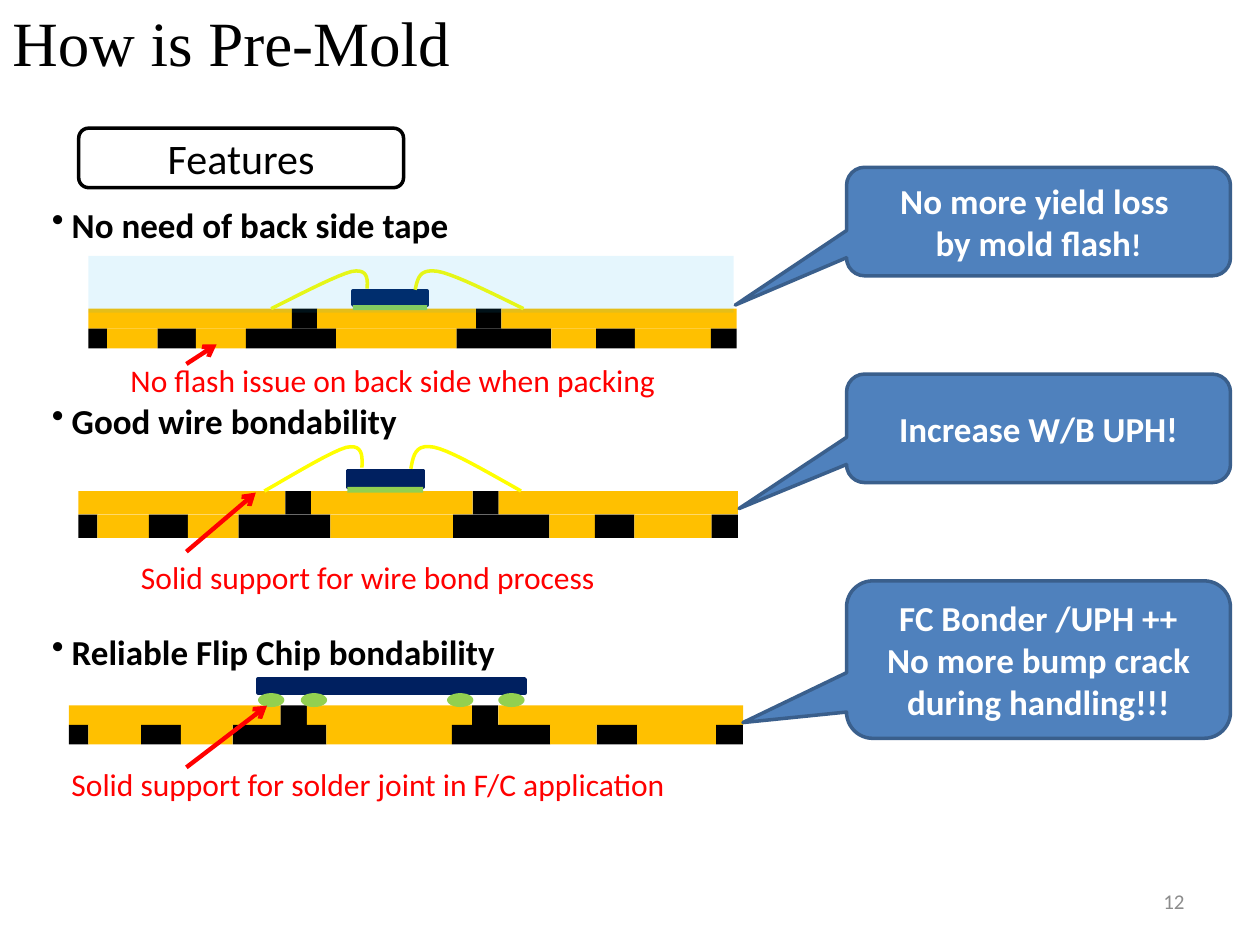
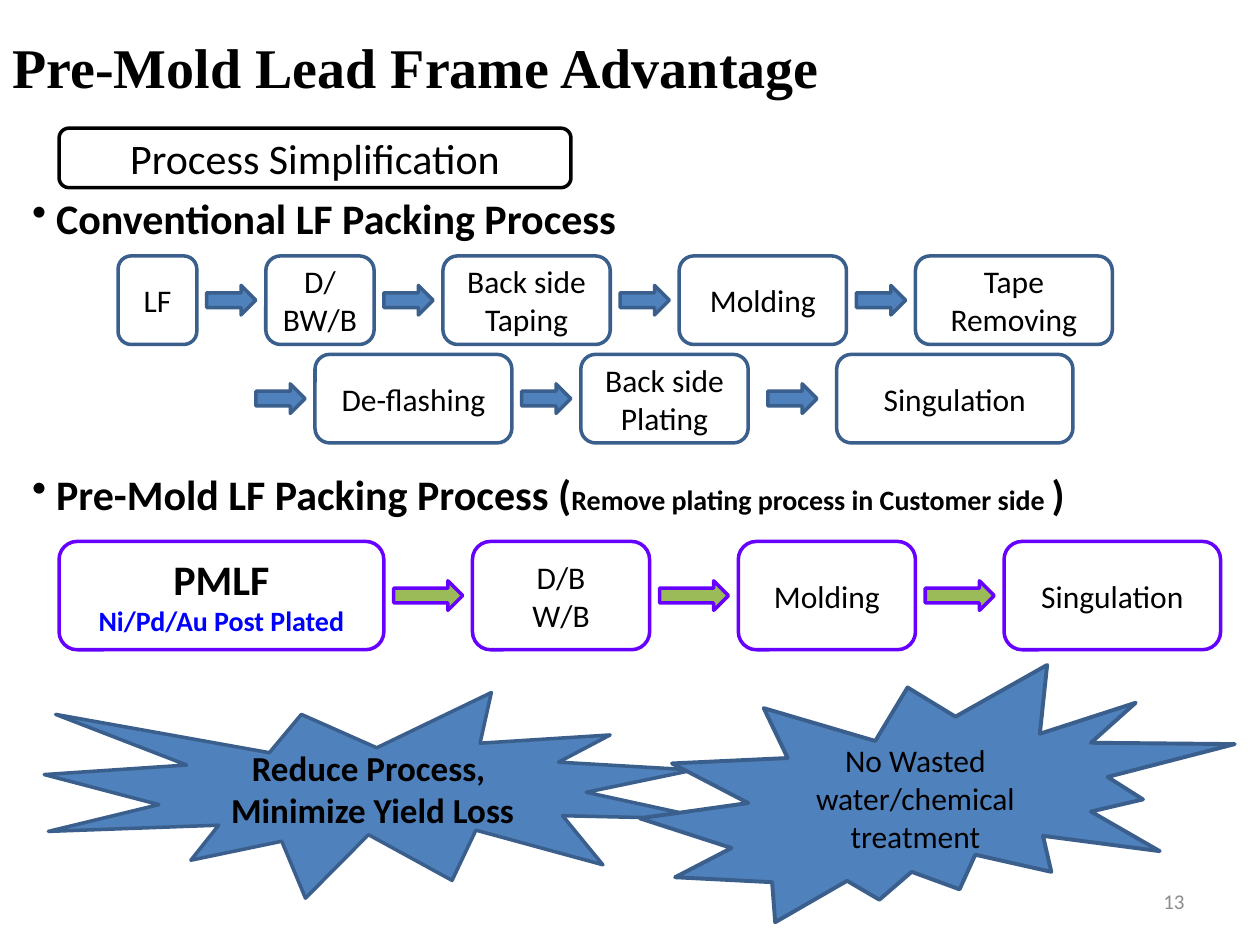
from pptx import Presentation
from pptx.dml.color import RGBColor
from pptx.enum.shapes import MSO_CONNECTOR, MSO_SHAPE
from pptx.enum.text import MSO_ANCHOR, PP_ALIGN
from pptx.oxml.ns import qn
from pptx.util import Pt
from lxml import etree

BLACK = RGBColor(0x00, 0x00, 0x00)
WHITE = RGBColor(0xFF, 0xFF, 0xFF)
GREY = RGBColor(0x8C, 0x8C, 0x8C)
RED = RGBColor(0xFF, 0x00, 0x00)
BLUE = RGBColor(0x4F, 0x81, 0xBD)
BLUE_LINE = RGBColor(0x3A, 0x5F, 0x8C)
PURE_BLUE = RGBColor(0x00, 0x00, 0xFF)
SKY = RGBColor(0x00, 0xB0, 0xF0)
NAVY = RGBColor(0x00, 0x20, 0x60)
COPPER = RGBColor(0xFF, 0xC0, 0x00)
YELLOW = RGBColor(0xFF, 0xFF, 0x00)
SOLDER = RGBColor(0x92, 0xD0, 0x50)
GREEN = RGBColor(0x9B, 0xBB, 0x59)
VIOLET = RGBColor(0x66, 0x00, 0xFF)

RECT = MSO_SHAPE.RECTANGLE
ROUNDED = MSO_SHAPE.ROUNDED_RECTANGLE
CALLOUT = MSO_SHAPE.ROUNDED_RECTANGULAR_CALLOUT
BUMP = MSO_SHAPE.FLOWCHART_CONNECTOR
ARROW = MSO_SHAPE.RIGHT_ARROW
SEAL_1 = MSO_SHAPE.EXPLOSION1
SEAL_2 = MSO_SHAPE.EXPLOSION2
STRAIGHT = MSO_CONNECTOR.STRAIGHT
LEFT, CENTER, RIGHT = PP_ALIGN.LEFT, PP_ALIGN.CENTER, PP_ALIGN.RIGHT
TOP, MIDDLE, BOTTOM = MSO_ANCHOR.TOP, MSO_ANCHOR.MIDDLE, MSO_ANCHOR.BOTTOM


def draw(shapes, preset, place, fill=None, line=None, weight=2):
    """Add a preset shape, or a text box when preset is None; place is in points."""
    place = [Pt(length) for length in place]
    if preset is None:
        return shapes.add_textbox(*place)
    shape = shapes.add_shape(preset, *place)
    shape.shadow.inherit = False
    if fill is None:
        shape.fill.background()
    else:
        shape.fill.solid()
        shape.fill.fore_color.rgb = fill
    if line is None:
        shape.line.fill.background()
    else:
        shape.line.color.rgb = line
        shape.line.width = Pt(weight)
    return shape


def write(box, paras, size, color=BLACK, align=CENTER, anchor=MIDDLE,
          bold=False, face="Calibri", bullet=False):
    """Fill a box; each paragraph is a list of (text, changed format values)."""
    frame = box.text_frame
    frame.word_wrap = True
    frame.vertical_anchor = anchor
    for index, spans in enumerate(paras):
        para = frame.paragraphs[0] if index == 0 else frame.add_paragraph()
        para.alignment = align
        if bullet:
            properties = para._p.get_or_add_pPr()
            indent = Pt(0.57 * size)
            properties.set("marL", str(indent))
            properties.set("indent", str(-indent))
            etree.SubElement(properties, qn("a:buChar"), char="•")
        for text, changes in spans:
            span = para.add_run()
            span.text = text
            values = {"name": face, "size": Pt(size), "bold": bold} | changes
            span.font.color.rgb = values.pop("color", color)
            for name, value in values.items():
                setattr(span.font, name, value)


deck = Presentation()
deck.slide_width, deck.slide_height = Pt(720), Pt(540)
blank = deck.slide_layouts[6]

# Title, heading and page number of each slide
pages = []
for number, title, title_place, title_size, bold, heading, heading_left, heading_width in [
    ("12", "How is Pre-Mold", (0, 0, 558.75, 49), 36, False, "Features", 45, 185.6),
    ("13", "Pre-Mold Lead Frame Advantage", (0, 15, 558.75, 45.5), 32, True,
     "Process Simplification", 33.75, 292.5),
]:
    page = deck.slides.add_slide(blank)
    pages.append(page)
    write(draw(page.shapes, None, (516, 500.5, 168, 28.75)), [[(number, {})]], 12, GREY, RIGHT)
    write(draw(page.shapes, None, title_place), [[(title, {})]], title_size,
          align=LEFT, anchor=BOTTOM, bold=bold, face="Times New Roman")
    box = draw(page.shapes, ROUNDED, (heading_left, 73.25, heading_width, 34), WHITE, BLACK)
    write(box, [[(heading, {})]], 24)
features, process = pages

# Lead frame cross-sections: x in percent of the frame width, y in layer heights
TOP_BREAKS = [0, 31.4, 35.3, 59.8, 63.7, 100]
BOTTOM_BREAKS = [0, 2.9, 10.7, 16.6, 24.3, 38.2, 56.8, 71.4, 78.3, 84.3, 96, 100]
WIRES = [
    [(50.4, -0.95), (50.8, -1.51), (51, -2.02), (53.9, -1.87),
     (56.6, -1.7), (61.8, -0.84), (67.1, 0)],
    [(43, -1), (43.1, -1.51), (43.1, -2.02), (40.6, -1.86),
     (38.1, -1.67), (30, -0.27), (28.2, 0)],
]
BUMPS = [28.06, 34.4, 56.1, 63.7]
CURVE_STEPS = 10

for heading, heading_top, caption, caption_place, frame, arrow_ends, flip_chip, molded in [
    ("No need of back side tape", 112.5, "No flash issue on back side when packing",
     (67.5, 202.5, 348.5, 28.8), (50.5, 176.4, 370.5, 11.4), (106.5, 208, 123.8, 196.8),
     False, True),
    ("Good wire bondability", 224.5, "Solid support for wire bond process",
     (73.5, 315.25, 337.5, 28.8), (44.75, 280.6, 377, 13.4), (106.5, 315.25, 146.2, 281.5),
     False, False),
    ("Reliable Flip Chip bondability", 356.5, "Solid support for solder joint in F/C application",
     (33.75, 433.5, 433.5, 28.8), (39.4, 403, 385.2, 11.2), (106.5, 438.5, 152.6, 403.25),
     True, False),
]:
    box = draw(features.shapes, None, (22.5, heading_top, 650, 31.5))
    write(box, [[(heading, {})]], 20, align=LEFT, anchor=TOP, bold=True, bullet=True)

    parts = features.shapes.add_group_shape().shapes
    write(draw(parts, None, caption_place), [[(caption, {})]], 18, RED, LEFT, TOP)
    left, top, width, layer = frame
    percent = width / 100
    for row, (breaks, colors) in enumerate([(TOP_BREAKS, (COPPER, BLACK)),
                                            (BOTTOM_BREAKS, (BLACK, COPPER))]):
        for index, (start, end) in enumerate(zip(breaks, breaks[1:])):
            draw(parts, RECT, (left + start * percent, top + row * layer,
                               (end - start) * percent, layer), colors[index % 2])

    if flip_chip:
        draw(parts, RECT, (left + 28.06 * percent, top - 1.34 * layer,
                           39.6 * percent, 0.71 * layer), NAVY, NAVY)
        for bump in BUMPS:
            draw(parts, BUMP, (left + bump * percent, top - 0.62 * layer,
                               3.9 * percent, 0.71 * layer), SOLDER)
    else:
        chip_left, chip_width = left + 40.8 * percent, 11.47 * percent
        draw(parts, RECT, (chip_left, top - 0.88 * layer, chip_width, 0.7 * layer), NAVY, NAVY)
        draw(parts, RECT, (chip_left, top - 0.18 * layer, chip_width, 0.25 * layer), SOLDER)
        for wire in WIRES:
            points = [(Pt(left + x * percent), Pt(top + y * layer)) for x, y in wire]
            outline = []
            for first in (0, 3):
                for step in range(1, CURVE_STEPS + 1):
                    t = step / CURVE_STEPS
                    weights = ((1 - t) ** 3, 3 * t * (1 - t) ** 2, 3 * t * t * (1 - t), t ** 3)
                    outline.append([sum(w * point[axis] for w, point in
                                        zip(weights, points[first:first + 4]))
                                    for axis in (0, 1)])
            builder = parts.build_freeform(*points[0])
            builder.add_line_segments(outline, close=False)
            curve = builder.convert_to_shape()
            curve.shadow.inherit = False
            curve.fill.background()
            curve.line.color.rgb = YELLOW
            curve.line.width = Pt(2)

    pointer = parts.add_connector(STRAIGHT, *[Pt(length) for length in arrow_ends])
    pointer.line.color.rgb = RED
    pointer.line.width = Pt(2.5)
    properties = pointer._element.spPr
    etree.SubElement(properties.find(qn("a:ln")), qn("a:tailEnd"), type="arrow")
    etree.SubElement(properties, qn("a:effectLst"))

    if molded:
        mold = draw(parts, RECT, (50.5, 146.2, 368.75, 32.4), SKY)
        tint = mold._element.spPr.find(qn("a:solidFill"))[0]
        etree.SubElement(tint, qn("a:alpha"), val="10000")

for top, height, tip, paras in [
    (95.6, 62, (-0.79, 0.77),
     [[("No more yield loss ", {})], [("by mold flash", {}), ("!", {"size": Pt(18)})]]),
    (213.75, 62, (-0.78, 0.74), [[("Increase W/B UPH!", {})]]),
    (331.9, 90, (-0.77, 0.4),
     [[("FC Bonder /UPH ++", {})], [("No more bump crack during handling!!!", {})]]),
]:
    callout = draw(features.shapes, CALLOUT, (483.75, top, 219.4, height), BLUE, BLUE_LINE)
    callout.adjustments[0], callout.adjustments[1] = tip
    write(callout, paras, 20, WHITE, bold=True)

# Process headings
for top, spans in [
    (106.5, [("Conventional LF Packing Process", {})]),
    (264, [("Pre-Mold LF Packing Process (", {}),
           ("Remove plating process in Customer side ", {"size": Pt(16)}), (")", {})]),
]:
    box = draw(process.shapes, None, (11.25, top, 708.75, 36.25))
    write(box, [spans], 24, align=LEFT, anchor=TOP, bold=True, bullet=True)

# Process rows: each step is the left of its arrow, left and width of its box, and its text
PLATED = {"size": Pt(16), "bold": True, "color": PURE_BLUE}
for top, height, line, arrow_fill, arrow_width, steps in [
    (146.25, 50.6, BLUE_LINE, BLUE, 28.1, [
        (None, 67.5, 45, [[("LF", {})]]),
        (118.1, 151.9, 61.9, [[("D/BW/B", {})]]),
        (219.4, 253.1, 95.6, [[("Back side Taping", {})]]),
        (354.4, 388.1, 95.6, [[("Molding", {})]]),
        (489.4, 523.1, 112.5, [[("Tape Removing", {})]]),
    ]),
    (202.5, 50.6, BLUE_LINE, BLUE, 28.1, [
        (146.25, 180, 112.5, [[("De-flashing", {})]]),
        (298.1, 331.9, 95.6, [[("Back side Plating", {})]]),
        (438.75, 478.1, 135, [[("Singulation", {})]]),
    ]),
    (309.4, 61.9, VIOLET, GREEN, 39.4, [
        (None, 33.75, 185.6, [[("PMLF", {"size": Pt(24), "bold": True})],
                              [("Ni/Pd/Au Post Plated", PLATED)]]),
        (225, 270, 101.25, [[("D/B", {})], [("W/B", {})]]),
        (376.9, 421.9, 101.25, [[("Molding", {})]]),
        (528.75, 573.75, 123.75, [[("Singulation", {})]]),
    ]),
]:
    for arrow_left, left, width, paras in steps:
        if arrow_left is not None:
            draw(process.shapes, ARROW, (arrow_left, top + (height - 16.9) / 2, arrow_width, 16.9),
                 arrow_fill, line)
        write(draw(process.shapes, ROUNDED, (left, top, width, height), None, line), paras, 18)

# Benefits
for seal, place, weight, size, bold, lines in [
    (SEAL_1, (25.3, 395.75, 380, 117.5), 2, 20, True, ["Reduce Process, ", "Minimize Yield Loss"]),
    (SEAL_2, (365.6, 380, 340, 147), 2.25, 18, False, ["No Wasted water/chemical treatment"]),
]:
    benefit = draw(process.shapes, seal, place, BLUE, BLUE_LINE, weight)
    write(benefit, [[(text, {})] for text in lines], size, bold=bold)

deck.save("out.pptx")
